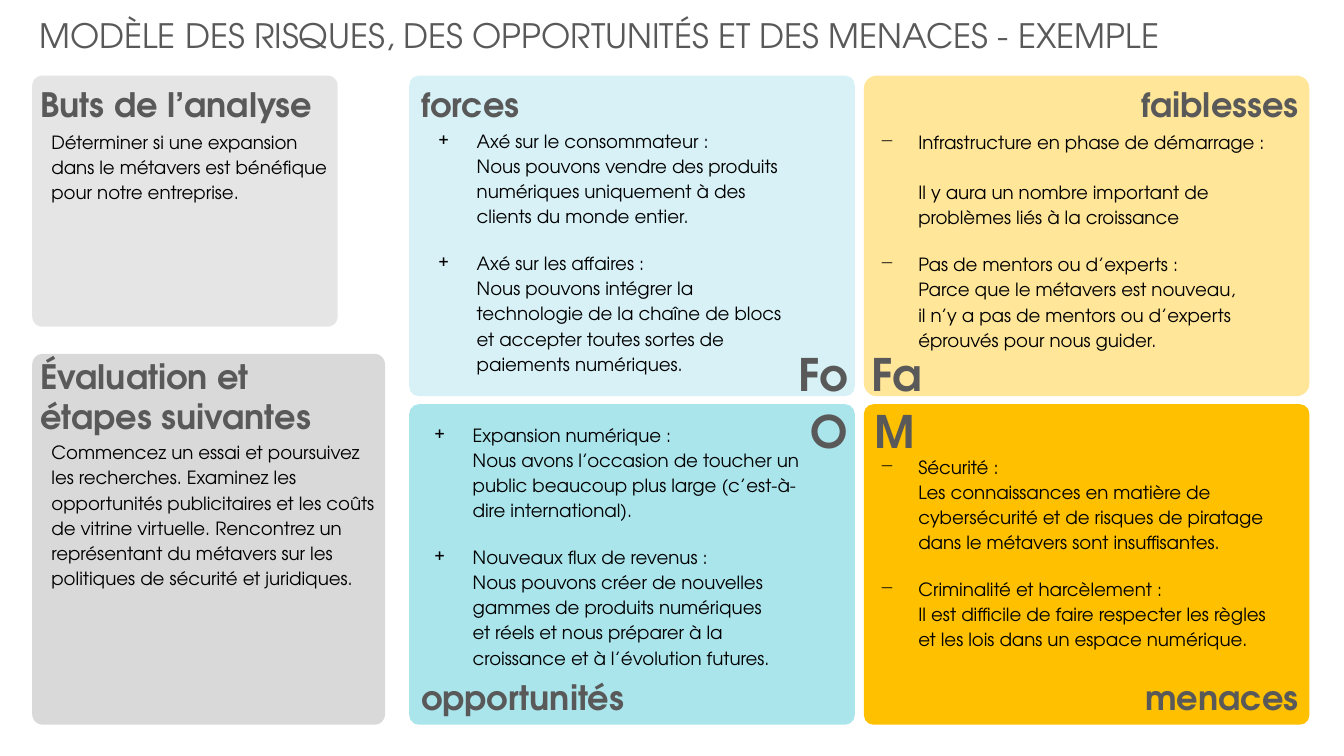
from dataclasses import dataclass

import pptx
import pptx.dml.color
import pptx.enum.shapes
import pptx.enum.text
import pptx.oxml.ns
import pptx.util
from lxml import etree

FONT = "TeX Gyre Adventor"
GREY = "595959"
BLACK = "000000"
CELL = 0.1
COLS, ROWS = 133.33, 75
QUAD_LEFT, QUAD_TOP = 40.6, 7.5
QUAD_W, QUAD_H = 44.2, 31.8
STEP_X, STEP_Y = 45.1, 32.6
HANG = 0.38
LEADING = 1.15
ITEM_GAP = 15.5
LINE_GAP = 18

ALIGN = pptx.enum.text.PP_ALIGN
ANCHOR = pptx.enum.text.MSO_ANCHOR


@dataclass(frozen=True)
class Box:
    col: float
    row: float
    cols: float
    rows: float


@dataclass(frozen=True)
class Item:
    head: str
    detail: str
    gap: float = 0


@dataclass(frozen=True)
class Quadrant:
    col: int
    row: int
    fill: str
    radius: float
    title: str
    letter: str
    letter_box: Box
    mark: str
    body_box: Box
    items: tuple[Item, ...]
    bottom: float = 0.05

    @property
    def left(self) -> float:
        return QUAD_LEFT + self.col * STEP_X

    @property
    def top(self) -> float:
        return QUAD_TOP + self.row * STEP_Y

    @property
    def align(self) -> ALIGN:
        return ALIGN.RIGHT if self.col else ALIGN.LEFT

    @property
    def letter_align(self) -> ALIGN:
        return ALIGN.LEFT if self.col else ALIGN.RIGHT


@dataclass(frozen=True)
class Card:
    panel: Box
    fill: str
    radius: float
    title: str
    title_box: Box
    body: str
    body_box: Box


QUADRANTS = (
    Quadrant(0, 0, "D7F1F6", 0.03, "forces", "Fo", Box(47.8, 33.9, 37.3, 9.4), "+",
             Box(42, 12.1, 37, 25.6), (
        Item("Axé sur le consommateur :",
             "Nous pouvons vendre des produits numériques uniquement à des clients du monde entier."),
        Item("Axé sur les affaires :",
             "Nous pouvons intégrer la technologie de la chaîne de blocs et accepter "
             "toutes sortes de paiements numériques."))),
    Quadrant(1, 0, "FFE699", 0.04, "faiblesses", "Fa", Box(85.5, 33.9, 38.2, 9.4), "−",
             Box(85.8, 12.2, 40.9, 23.1), (
        Item("Infrastructure en phase de démarrage :",
             "Il y aura un nombre important de problèmes liés à la croissance", LINE_GAP),
        Item("Pas de mentors ou d’experts :",
             "Parce que le métavers est nouveau,\n"
             "il n’y a pas de mentors ou d’experts éprouvés pour nous guider."))),
    Quadrant(0, 1, "ABE5EC", 0.03, "opportunités", "O", Box(46.9, 39.6, 38.2, 6.4), "+",
             Box(41.6, 41.3, 38.7, 27.7), (
        Item("Expansion numérique :",
             "Nous avons l’occasion de toucher un public beaucoup plus large "
             "(c’est-à-dire international)."),
        Item("Nouveaux flux de revenus :",
             "Nous pouvons créer de nouvelles gammes de produits numériques\n"
             "et réels et nous préparer à la croissance et à l’évolution futures.")), 0.27),
    Quadrant(1, 1, "FFC000", 0.03, "menaces", "M", Box(85.8, 39.6, 37, 6.7), "−",
             Box(85.8, 40.9, 42.8, 27.7), (
        Item("Sécurité :",
             "Les connaissances en matière de cybersécurité et de risques de piratage "
             "dans le métavers sont insuffisantes."),
        Item("Criminalité et harcèlement :",
             "Il est difficile de faire respecter les règles et les lois dans un espace numérique."))),
)

CARDS = (
    Card(Box(3.2, 7.5, 30.3, 24.9), "E5E5E5", 0.04,
         "Buts de l’analyse", Box(3, 7.8, 31.7, 9.1),
         "Déterminer si une expansion dans le métavers est bénéfique pour notre entreprise.",
         Box(3.6, 12.2, 29.9, 15.9)),
    Card(Box(3.2, 35.1, 35, 36.8), "D9D9D9", 0.03,
         "Évaluation et\nétapes suivantes", Box(3, 34.8, 35, 9.1),
         "Commencez un essai et poursuivez les recherches. Examinez les opportunités "
         "publicitaires et les coûts de vitrine virtuelle. Rencontrez un représentant "
         "du métavers sur les politiques de sécurité et juridiques.",
         Box(3.6, 43, 34.5, 24.1)),
)


def cells(n: float) -> pptx.util.Length:
    return pptx.util.Inches(n * CELL)


def place(box: Box) -> tuple[pptx.util.Length, ...]:
    return tuple(cells(n) for n in (box.col, box.row, box.cols, box.rows))


def rgb(color: str) -> pptx.dml.color.RGBColor:
    return pptx.dml.color.RGBColor.from_string(color)


def add_panel(s, box: Box, fill: str, radius: float) -> None:
    sp = s.shapes.add_shape(pptx.enum.shapes.MSO_SHAPE.ROUNDED_RECTANGLE, *place(box))
    sp.adjustments[0] = radius
    sp.shadow.inherit = False
    sp.fill.solid()
    sp.fill.fore_color.rgb = rgb(fill)
    sp.line.fill.background()


def set_frame(tf, anchor=ANCHOR.TOP, left: float = 0.1, bottom: float = 0.05) -> None:
    tf.word_wrap = True
    tf.auto_size = pptx.enum.text.MSO_AUTO_SIZE.NONE
    tf.vertical_anchor = anchor
    tf.margin_left = pptx.util.Inches(left)
    tf.margin_bottom = pptx.util.Inches(bottom)


def add_frame(s, box: Box, **frame):
    tf = s.shapes.add_textbox(*place(box)).text_frame
    set_frame(tf, **frame)
    return tf


def write(tf, text: str, *, size: float = 13, color: str = BLACK, bold: bool = False,
          align=ALIGN.LEFT, leading: float = 1, before: float = 0,
          hang: float = 0, mark: str = "") -> None:
    for i, line in enumerate(text.split("\n")):
        p = tf.paragraphs[0] if not tf.text else tf.add_paragraph()
        pPr = p._p.get_or_add_pPr()
        if hang:
            pPr.set("marL", str(pptx.util.Inches(hang)))
            pPr.set("indent", str(-pptx.util.Inches(hang) if mark else 0))
        if mark:
            etree.SubElement(pPr, pptx.oxml.ns.qn("a:buChar"), char=mark)
        p.alignment = align
        p.line_spacing = leading
        p.space_before = pptx.util.Pt(0 if i else before)
        r = p.add_run()
        r.text = line
        r.font.name = FONT
        r.font.size = pptx.util.Pt(size)
        r.font.bold = bold
        r.font.color.rgb = rgb(color)


def write_items(tf, q: Quadrant) -> None:
    for i, item in enumerate(q.items):
        write(tf, item.head, leading=LEADING, hang=HANG, mark=q.mark,
              before=ITEM_GAP if i else 0)
        write(tf, item.detail, leading=LEADING, hang=HANG, before=item.gap)


def main() -> None:
    prs = pptx.Presentation()
    prs.slide_width, prs.slide_height = cells(COLS), cells(ROWS)
    s = prs.slides.add_slide(prs.slide_layouts[5])

    title = s.shapes.title
    title.left, title.top, title.width, title.height = place(Box(2.9, 1, 119.9, 5))
    set_frame(title.text_frame)
    write(title.text_frame, "MODÈLE DES RISQUES, DES OPPORTUNITÉS ET DES MENACES - EXEMPLE",
          size=24, color=GREY)

    for card in CARDS:
        add_panel(s, card.panel, card.fill, card.radius)
        write(add_frame(s, card.body_box, left=0.15), card.body, leading=LEADING)
        write(add_frame(s, card.title_box), card.title, size=24, color=GREY, bold=True)

    for q in QUADRANTS:
        add_panel(s, Box(q.left, q.top, QUAD_W, QUAD_H), q.fill, q.radius)
    for q in QUADRANTS:
        write_items(add_frame(s, q.body_box, anchor=ANCHOR.MIDDLE, left=0.15, bottom=q.bottom), q)
        title_box = Box(q.left + (1.8 if q.col else 0.2), q.top + (26.6 if q.row else 0.3), 42.3, 5)
        write(add_frame(s, title_box), q.title, size=24, color=GREY, bold=True, align=q.align)
        write(add_frame(s, q.letter_box), q.letter, size=32, color=GREY, bold=True,
              align=q.letter_align)
    prs.save("out.pptx")


if __name__ == "__main__":
    main()
